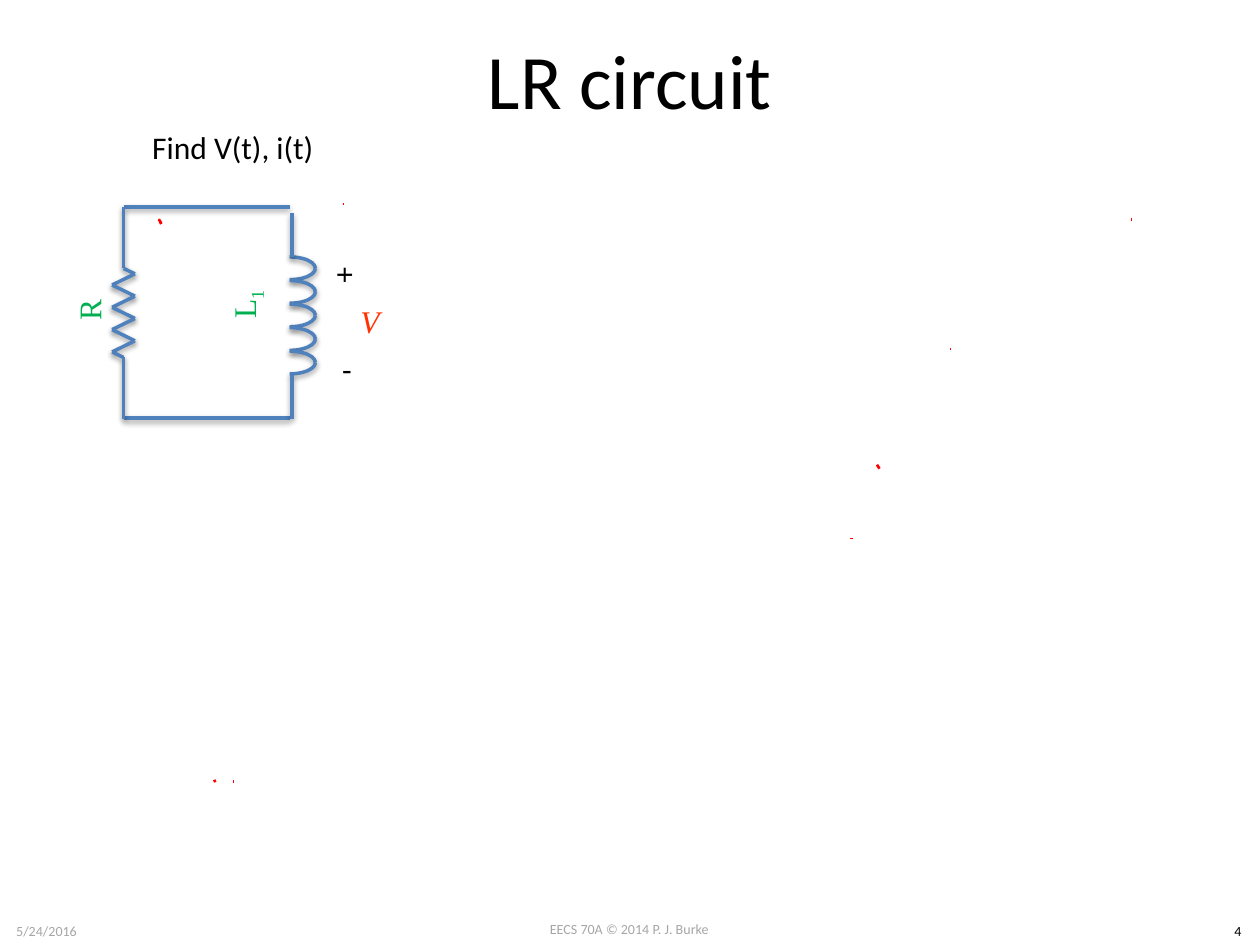
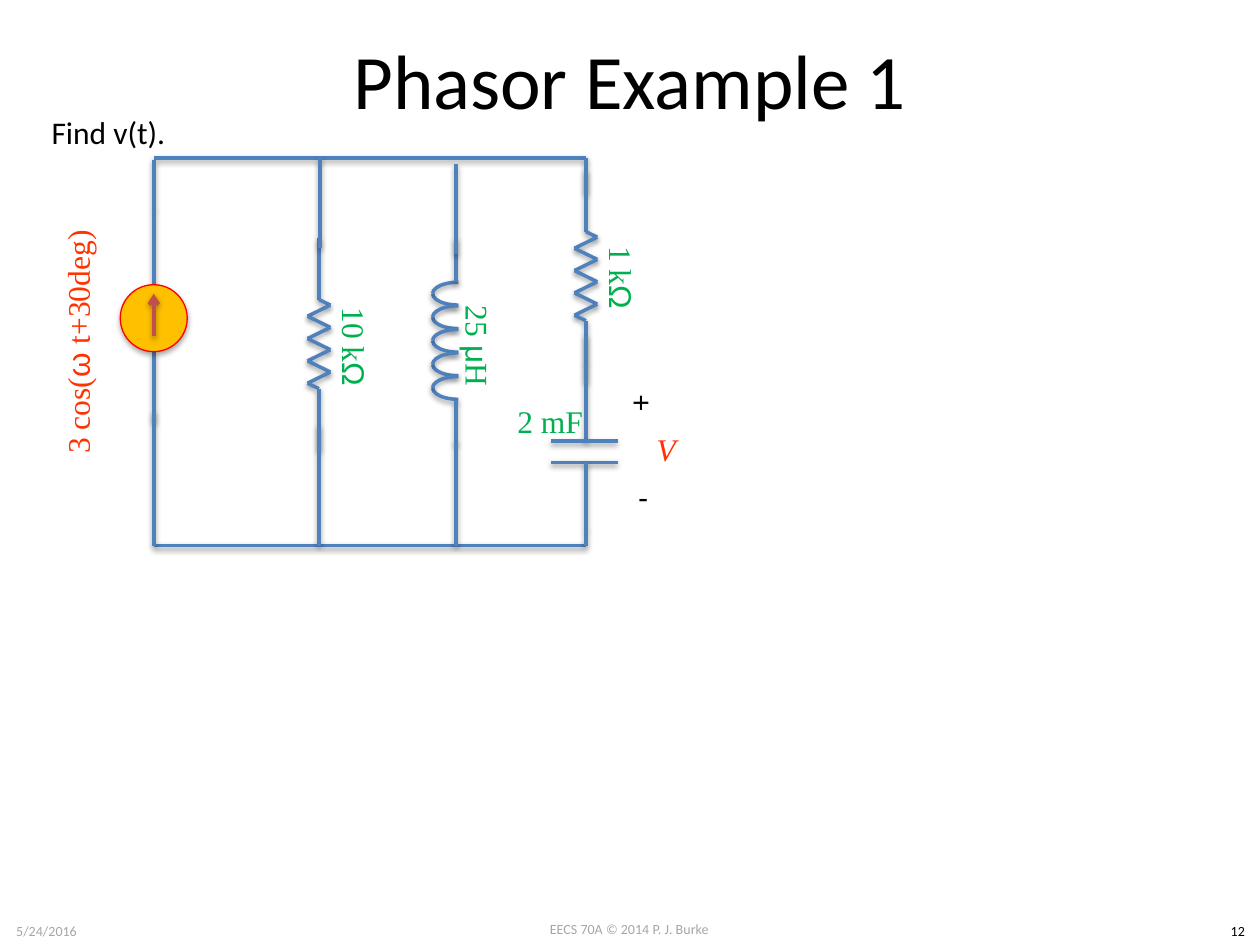
from itertools import pairwise

from lxml import etree
from pptx import Presentation
from pptx import util as u
from pptx.dml.color import RGBColor
from pptx.enum import shapes, text
from pptx.oxml.ns import qn

COLOURS = {"wire": "4F81BD", "value": "00B050", "signal": "FF3300", "ink": "FF0000",
           "source": "FFC000", "arrow": "C0504D", "text": "000000", "footer": "A6A6A6"}
BODY, MATH, GREEK = "Calibri", "Times New Roman", "Arial"
LABEL_SIZE = (3.02, 1.85)


def rgb(name):
    return RGBColor.from_string(COLOURS[name])


class CircuitSlides:
    """Holds the style and the current slide; all lengths are in centimetres."""

    def __init__(self):
        self.deck = Presentation()
        self.deck.slide_width, self.deck.slide_height = u.Cm(25.4), u.Cm(19.05)
        self.slide = None

    def new_slide(self, title, number):
        self.slide = self.deck.slides.add_slide(self.deck.slide_layouts[5])
        heading = self.slide.shapes.title
        heading.left, heading.top = u.Cm(1.27), u.Cm(0)
        heading.width, heading.height = u.Cm(22.86), u.Cm(3.18)
        heading.text_frame.text = title
        heading.text_frame.vertical_anchor = text.MSO_ANCHOR.MIDDLE
        paragraph = heading.text_frame.paragraphs[0]
        paragraph.alignment = text.PP_ALIGN.CENTER
        self.format_run(paragraph.runs[0], 44, BODY, "text")
        # Footer line
        for content, box, colour in (
                ("EECS 70A © 2014 P. J. Burke", (9.73, 18.44, 5.92, 0.61), "footer"),
                ("5/24/2016", (0, 18.47, 1.88, 0.61), "footer"),
                (number, (24.51, 18.47, 0.89, 0.61), "text")):
            self.text([content], box, size=8, colour=colour, centred=True)

    def format_run(self, run, size, font, colour, italic=False):
        run.font.size, run.font.name = u.Pt(size), font
        run.font.color.rgb = rgb(colour)
        run.font.italic = italic

    def text(self, pieces, box, size=18, font=BODY, colour="text", centred=False,
             middle=False, wrap=True, italic=False, rotation=0):
        holder = self.slide.shapes.add_textbox(*map(u.Cm, box))
        holder.rotation = rotation
        frame = holder.text_frame
        frame.word_wrap = wrap
        if middle:
            frame.vertical_anchor = text.MSO_ANCHOR.MIDDLE
        else:
            frame.auto_size = text.MSO_AUTO_SIZE.SHAPE_TO_FIT_TEXT
        paragraph = frame.paragraphs[0]
        paragraph.text = pieces[0]
        for piece in pieces[1:]:
            paragraph.add_run().text = piece
        paragraph.alignment = text.PP_ALIGN.CENTER if centred else text.PP_ALIGN.LEFT
        for run in paragraph.runs:
            is_greek = any(letter in "Ωωμ" for letter in run.text)
            self.format_run(run, size, GREEK if is_greek else font, colour, italic)
        return holder

    def label(self, pieces, left, top, rotation=0, size=LABEL_SIZE, colour="value",
              italic=False):
        return self.text(pieces, (left, top, *size), font=MATH, colour=colour, centred=True,
                         middle=True, italic=italic, rotation=rotation)

    def subscript_last(self, holder):
        list(holder.element.iter(qn("a:rPr")))[-1].set("baseline", "-25000")

    def stroke(self, part, colour, width):
        part.line.color.rgb = rgb(colour)
        part.line.width = u.Pt(width)

    def shadow(self, part, opacity=38000, distance=20000):
        effects = etree.SubElement(part.element.spPr, qn("a:effectLst"))
        outer = etree.SubElement(effects, qn("a:outerShdw"), blurRad="40000",
                                 dist=str(distance), dir="5400000", rotWithShape="0")
        black = etree.SubElement(outer, qn("a:srgbClr"), val="000000")
        etree.SubElement(black, qn("a:alpha"), val=str(opacity))

    def wire(self, *points, colour="wire", arrow=False):
        for start, end in pairwise(points):
            segment = self.slide.shapes.add_connector(
                shapes.MSO_CONNECTOR.STRAIGHT, *map(u.Cm, (*start, *end)))
            self.stroke(segment, colour, 2)
            if arrow:
                outline = segment.element.spPr.find(qn("a:ln"))
                etree.SubElement(outline, qn("a:tailEnd"), type="arrow")
            self.shadow(segment)

    def resistor(self, x, top):
        lead, reach, half, step = 1.24, 0.23, 0.11, 0.225
        first = top + lead + half
        teeth = [(x + reach * (-1) ** i, first + i * step) for i in range(8)]
        end = first + 7 * step + half
        self.wire((x, top), (x, top + lead), *teeth, (x, end), (x, end + lead))

    def inductor(self, x, top, bulge=1):
        lead, pitch, loops = 0.89, 0.475, 5
        width, height = 1.04, 0.46
        left = x - 0.05 * bulge - width / 2
        for i in range(loops):
            for flipped in (False, True):
                arc = self.slide.shapes.add_shape(
                    shapes.MSO_SHAPE.ARC, u.Cm(left), u.Cm(top + lead + i * pitch),
                    u.Cm(width), u.Cm(height))
                arc.rotation = 0 if bulge > 0 else 180
                if flipped:
                    arc.element.spPr.find(qn("a:xfrm")).set("flipV", "1")
                arc.fill.background()
                self.stroke(arc, "wire", 2)
                self.shadow(arc)
        coil_end = top + lead + loops * pitch
        self.wire((x, top), (x, top + lead))
        self.wire((x, coil_end), (x, coil_end + lead))

    def current_source(self, x, top, diameter=1.35):
        circle = self.slide.shapes.add_shape(
            shapes.MSO_SHAPE.OVAL, u.Cm(x - diameter / 2), u.Cm(top),
            u.Cm(diameter), u.Cm(diameter))
        circle.fill.solid()
        circle.fill.fore_color.rgb = rgb("source")
        self.stroke(circle, "ink", 0.75)
        self.shadow(circle, 35000, 23000)
        self.wire((x, top + 1.04), (x, top + 0.18), colour="arrow", arrow=True)

    def voltage(self, left, top):
        self.text(["+"], (left + 0.1, top - 0.64, 0.84, 1.02), wrap=False, rotation=90)
        self.text(["-"], (left + 0.17, top + 1.24, 0.71, 1.02), wrap=False)
        self.label(["V"], left, top, size=(1.96, 1.55), colour="signal", italic=True)

    def ink(self, *marks):
        marks = [[(u.Cm(x), u.Cm(y)) for x, y in mark] for mark in marks]
        builder = self.slide.shapes.build_freeform(*marks[0][0])
        for i, (start, *rest) in enumerate(marks):
            if i:
                builder.move_to(*start)
            builder.add_line_segments(rest, close=False)
        pen = builder.convert_to_shape()
        pen.fill.background()
        self.stroke(pen, "ink", 1.5)
        pen.shadow.inherit = False


def lr_circuit(show):
    show.new_slide("LR circuit", "4")
    show.text(["Find V(t), i(t)"], (2.82, 2.46, 3.81, 1.02), wrap=False)
    # Loop
    for rail in (4.17, 8.43):
        show.wire((2.49, rail), (5.84, rail))
    show.label(["R"], 0.28, 5.33, 270)
    show.resistor(2.49, 4.17)
    show.inductor(5.89, 4.29)
    show.voltage(6.48, 5.69)
    show.subscript_last(show.label(["L", "1"], 3.45, 5.21, 270))
    # Pen marks
    show.ink([(17.73, 9.45), (17.68, 9.37)],
             [(4.7, 15.75), (4.72, 15.75)],
             [(3.25, 4.5), (3.21, 4.43), (3.25, 4.52)])
    show.ink([(19.15, 7.04), (19.16, 7.04)],
             [(17.17, 10.85), (17.17, 10.87)],
             [(4.34, 15.77), (4.32, 15.72)],
             [(6.91, 4.11), (6.93, 4.11)],
             [(22.81, 4.42), (22.83, 4.42)])


def phasor_example(show):
    show.new_slide("Phasor Example 1", "12")
    show.text(["Find v(t)."], (0.79, 2.16, 4.29, 1.02))
    top_rail, bottom_rail = 3.18, 11
    source, shunt, coil, load = 3.1, 6.43, 9.19, 11.81
    show.wire((load, top_rail), (source, top_rail))
    show.wire((source, bottom_rail), (load, bottom_rail))
    # Current source branch
    show.label(["3 cos(", "ω ", "t+30deg)"], -1.12, 6.12, 270, (5.36, 1.55), "signal")
    show.wire((source, 3.23), (source, 4.22), (source, 5.74))
    show.wire((source, 7.09), (source, 8.51))
    show.wire((source, 8.28), (source, bottom_rail))
    show.current_source(source, 5.74)
    # Shunt resistor branch
    show.label(["10 k", "Ω"], 5.64, 6.07, 90)
    show.resistor(shunt, 4.8)
    show.wire((6.45, 5), (6.45, top_rail))
    show.wire((shunt, 8.56), (shunt, bottom_rail))
    # Inductor branch
    show.inductor(coil, 4.8, bulge=-1)
    show.wire((coil, 5.13), (coil, 3.3))
    show.wire((coil, 8.89), (coil, bottom_rail))
    show.label(["25 ", "μ", "H"], 8.13, 6.05, 90)
    # Load resistor and capacitor branch
    show.wire((load, top_rail), (load, 3.91))
    show.label(["1 k", "Ω"], 11.02, 4.67, 90)
    show.resistor(load, 3.43)
    show.wire((load, 6.76), (load, 7.32), (load, 8.89))
    for plate in (8.89, 9.32):
        show.wire((12.45, plate), (11.1, plate))
    show.wire((load, 9.32), (load, 10.67), (load, bottom_rail))
    show.label(["2 mF"], 9.58, 7.57)
    show.voltage(12.45, 8.28)


def main():
    show = CircuitSlides()
    lr_circuit(show)
    phasor_example(show)
    show.deck.save("out.pptx")


if __name__ == "__main__":
    main()
